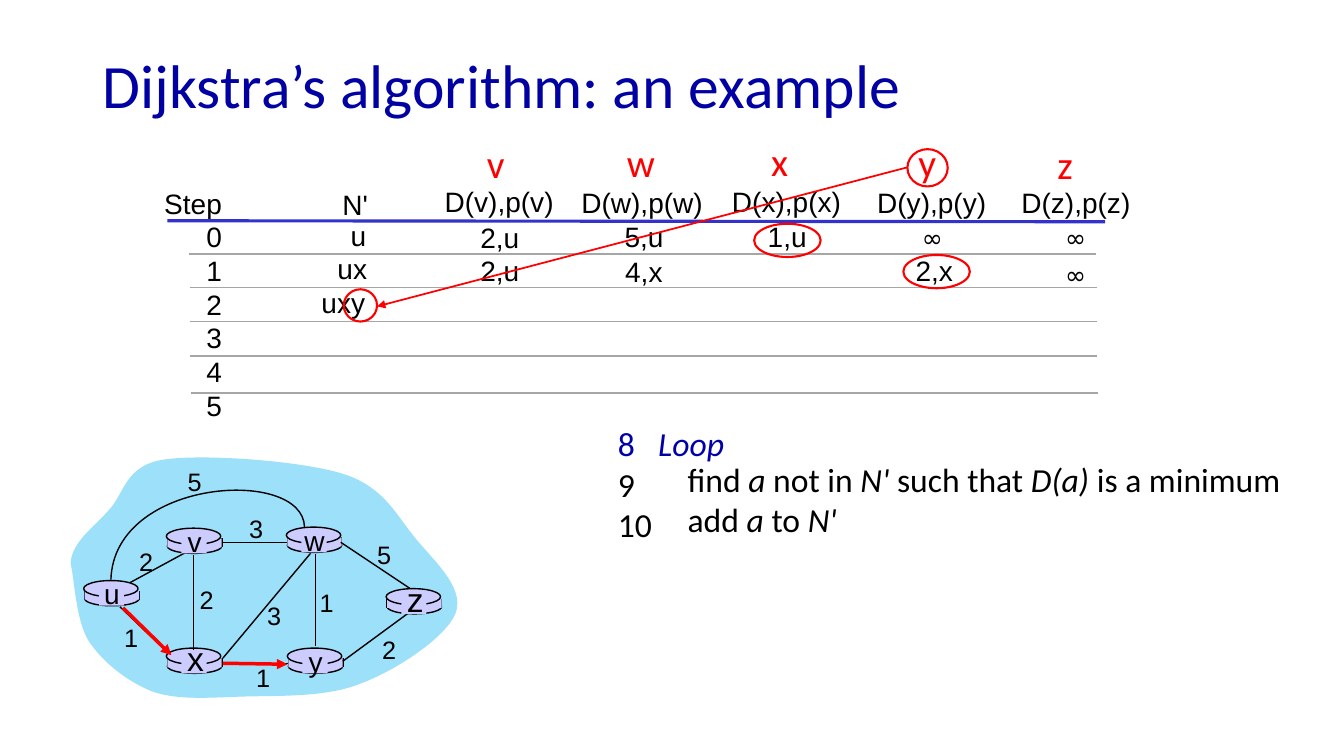
from lxml import etree
from pptx import Presentation
from pptx import util as u
from pptx.dml.color import RGBColor
from pptx.enum import shapes, text
from pptx.oxml import ns

PX = 9144  # 100 px to the inch
BLACK, RED, NAVY, CODE_BLUE = "000000", "FF0000", "0000A3", "0000A8"
GREY, RULE_BLUE, CLOUD, LILAC = "A6A6A6", "3333CC", "9CE0FA", "CCCCFF"
LEFT, CENTER, RIGHT = text.PP_ALIGN.LEFT, text.PP_ALIGN.CENTER, text.PP_ALIGN.RIGHT
RECT, OVAL = shapes.MSO_SHAPE.RECTANGLE, shapes.MSO_SHAPE.OVAL


def px(*values):
    return [v * PX for v in values]


def rgb(color):
    return RGBColor.from_string(color)


def add_text(s, box, paragraphs, size=20, font="Arial", color=BLACK, align=LEFT):
    """Each paragraph is a list of runs: (words, italic) or (words, italic, color)."""
    tb = s.shapes.add_textbox(*px(*box))
    tf = tb.text_frame
    tf.word_wrap = False
    tf.auto_size = text.MSO_AUTO_SIZE.SHAPE_TO_FIT_TEXT
    for i, runs in enumerate(paragraphs):
        p = tf.paragraphs[0] if i == 0 else tf.add_paragraph()
        p.alignment = align
        for words, italic, *own_color in runs:
            r = p.add_run()
            r.text = words
            r.font.size, r.font.name, r.font.italic = u.Pt(size), font, italic
            r.font.color.rgb = rgb(own_color[0] if own_color else color)
    return tf


def add_label(s, box, words, **style):
    return add_text(s, box, [[(words, False)]], **style)


def style_shape(sp, fill=None, line=None, width=1.0):
    sp.shadow.inherit = False
    if fill:
        sp.fill.solid()
        sp.fill.fore_color.rgb = rgb(fill)
    else:
        sp.fill.background()
    if line:
        sp.line.color.rgb = rgb(line)
        sp.line.width = u.Pt(width)
    else:
        sp.line.fill.background()


def add_shape(s, kind, box, **style):
    style_shape(s.shapes.add_shape(kind, *px(*box)), **style)


def add_line(s, ends, color=BLACK, width=1.0, arrow=False):
    c = s.shapes.add_connector(shapes.MSO_CONNECTOR.STRAIGHT, *px(*ends))
    c.line.color.rgb = rgb(color)
    c.line.width = u.Pt(width)
    if arrow:
        etree.SubElement(c.line._get_or_add_ln(), ns.qn("a:tailEnd"), type="triangle")
    etree.SubElement(c._element.spPr, ns.qn("a:effectLst"))


def add_curve(s, start, points, close, **style):
    """Points come in threes: two Bézier controls and an end."""
    builder = s.shapes.build_freeform(*start, scale=PX)
    builder.add_line_segments(points, close=close)
    sp = builder.convert_to_shape()
    segments = list(sp._element.iter(ns.qn("a:lnTo")))
    for i in range(0, len(segments), 3):
        curve = etree.Element(ns.qn("a:cubicBezTo"))
        segments[i].addprevious(curve)
        for segment in segments[i:i + 3]:
            curve.append(segment[0])
            segment.getparent().remove(segment)
    style_shape(sp, **style)


def add_router(s, x, y):
    add_shape(s, OVAL, (x + 1, y + 11, 54, 14), fill=LILAC, line=BLACK)
    for side in (x + 1, x + 55):
        add_line(s, (side, y + 10, side, y + 19))
    add_shape(s, RECT, (x + 1, y + 10, 54, 9), fill=LILAC)
    add_shape(s, OVAL, (x, y, 54, 16), fill=LILAC, line=BLACK)


def add_router_name(s, name, x, y, size):
    add_shape(s, RECT, (x + 15, y + 2, 25, 23), fill=LILAC)
    left, top, height = (9, -15, 50) if size == 24 else (8, -9, 43)
    add_label(s, (x + left, y + top, 40, height), name, size=size, align=CENTER)


def draw_table(s):
    # Step column
    steps = [[(step, False)] for step in ("Step", *"012345")]
    add_text(s, (153, 180, 77, 243), steps, align=RIGHT)

    # Column headings
    add_label(s, (329, 181, 46, 44), "N'", align=RIGHT)
    for name, name_left, name_top, name_width, left, width, top in (
            ("v", 473, 133, 38, 430, 129, 178), ("w", 612, 132, 48, 565, 142, 179),
            ("x", 755, 131, 37, 715, 129, 178), ("y", 901, 132, 38, 859, 129, 179),
            ("z", 1039, 134, 36, 1002, 129, 179)):
        add_label(s, (left, top, width, 44), f"D({name}),p({name})", align=RIGHT)
        add_label(s, (name_left, name_top, name_width, 57), name, size=28,
                  font="Calibri", color=RED)

    # Rules
    add_line(s, (166, 219, 1096, 220), RULE_BLUE, 2.25)
    for left, y in ((187, 252), (188, 285), (188, 319), (188, 353), (189, 390)):
        add_line(s, (left, y, left + 900, y), GREY)

    # Values, each set against the right edge of its column
    for words, right, top, width in (
            ("u", 373, 212, 36), ("ux", 374, 245, 50), ("uxy", 372, 278, 64),
            ("2,u", 525, 214, 59), ("5,u", 668, 213, 59), ("1,u", 810, 213, 59),
            ("2,u", 525, 247, 59), ("4,x", 667, 248, 58), ("2,x", 955, 247, 58)):
        add_label(s, (right - width, top, width, 44), words, align=RIGHT)
    for left, top in ((904, 216), (1046, 216), (1046, 252)):
        add_label(s, (left, top, 41, 40), "∞", size=18, font="Comic Neue", align=RIGHT)


def draw_choices(s):
    for ring in ((748, 222, 66, 33), (896, 253, 66, 33),
                 (900, 148, 40, 37), (341, 287, 33, 32)):
        add_shape(s, OVAL, ring, line=RED, width=1.5)
    add_line(s, (900, 166, 374, 304), RED, 1.25, arrow=True)


def draw_loop(s):
    numbers = add_text(s, (603, 375, 134, 212),
                       [[("8\t", False, CODE_BLUE), ("Loop", True, CODE_BLUE)],
                        [("9", False)], [("10", False)]], size=24, font="Calibri")
    tabs = etree.SubElement(numbers.paragraphs[0]._p.get_or_add_pPr(), ns.qn("a:tabLst"))
    etree.SubElement(tabs, ns.qn("a:tab"), pos=str(40 * PX), algn="l")
    steps = add_text(s, (665, 410, 641, 131),
                     [[("find ", False), ("a", True), (" not in ", False), ("N' ", True),
                       ("such that ", False), ("D(a) ", True), ("is a minimum", False)],
                      [("add ", False), ("a", True), (" to ", False), ("N'", True)]],
                     size=24, font="Calibri")
    steps.margin_left = 17 * PX
    for tf in (numbers, steps):
        tf.margin_top = 45 * PX


def draw_network(s):
    add_curve(s, (70, 559), [
        (71, 538), (93, 523), (108, 506), (124, 489), (124, 462), (162, 456),
        (201, 450), (298, 457), (340, 470), (381, 483), (393, 511), (412, 534),
        (431, 557), (461, 583), (452, 608), (443, 632), (393, 665), (358, 678),
        (324, 692), (277, 690), (243, 691), (208, 692), (177, 695), (151, 686),
        (126, 676), (102, 657), (88, 636), (75, 615), (74, 575), (70, 559)],
        close=True, fill=CLOUD)

    # Routers and links
    routers = (("u", 83, 576, 20), ("x", 165, 643, 24), ("v", 165, 524, 20),
               ("w", 284, 523, 20), ("y", 285, 643, 20), ("z", 383, 584, 24))
    add_line(s, (129, 578, 188, 546))
    for _, x, y, _ in routers:
        add_router(s, x, y)
    for link in ((313, 550, 313, 641), (192, 551, 192, 645), (221, 653, 308, 549),
                 (340, 656, 404, 609), (286, 658, 222, 658), (167, 648, 119, 602),
                 (285, 538, 221, 538), (407, 584, 338, 538)):
        add_line(s, link)
    add_curve(s, (302, 523), [(301, 463), (113, 474), (110, 575)],
              close=False, line=BLACK)
    for name, x, y, size in routers:
        add_router_name(s, name, x, y, size)

    # Link costs
    for cost, left, top in (("2", 128, 537), ("2", 188, 575), ("1", 113, 612),
                            ("3", 255, 591), ("1", 244, 652), ("1", 307, 578),
                            ("2", 369, 624), ("5", 364, 530), ("3", 237, 504),
                            ("5", 176, 458)):
        add_label(s, (left, top, 34, 40), cost, size=18, align=CENTER)

    # Links on the shortest path
    for link in ((122, 603, 170, 650), (221, 658, 285, 659)):
        add_line(s, link, RED, 2.5, arrow=True)


def main():
    prs = Presentation()
    prs.slide_width, prs.slide_height = px(1333, 750)
    s = prs.slides.add_slide(prs.slide_layouts[6])

    # Title
    tf = add_label(s, (92, 39, 1223, 98), "Dijkstra’s algorithm: an example",
                   size=44, font="Calibri", color=NAVY)
    tf.word_wrap, tf.auto_size = True, text.MSO_AUTO_SIZE.NONE
    tf.vertical_anchor = text.MSO_ANCHOR.MIDDLE
    tf.paragraphs[0].line_spacing = 0.9

    draw_table(s)
    draw_loop(s)
    draw_network(s)
    draw_choices(s)
    prs.save("out.pptx")


if __name__ == "__main__":
    main()
